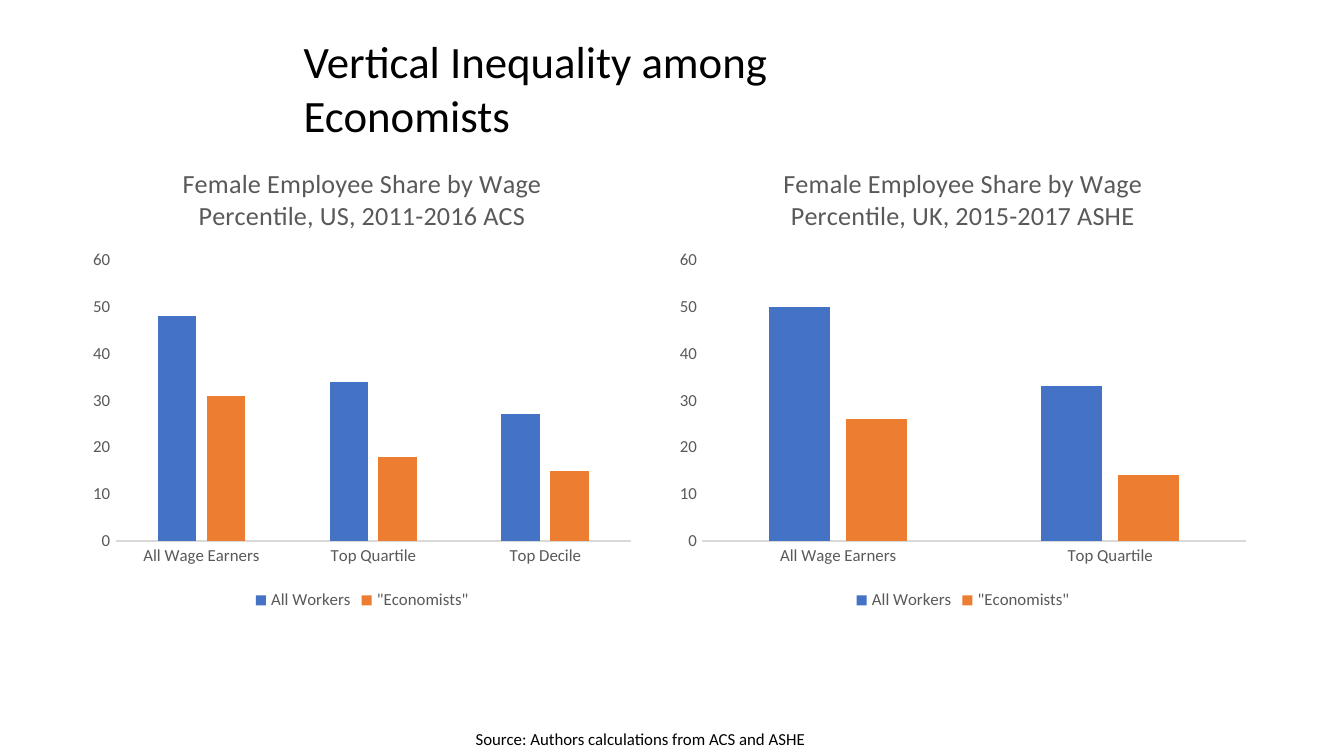
"""Build a slide comparing female employee shares by wage percentile in the US and UK."""
from pptx import Presentation
from pptx.chart.data import CategoryChartData
from pptx.dml.color import RGBColor
from pptx.enum.chart import XL_CHART_TYPE, XL_LEGEND_POSITION, XL_TICK_MARK
from pptx.enum.text import MSO_ANCHOR, MSO_AUTO_SIZE, PP_ALIGN
from pptx.util import Inches, Pt

COLUMNS = XL_CHART_TYPE.COLUMN_CLUSTERED
BOTTOM = XL_LEGEND_POSITION.BOTTOM
NO_TICK = XL_TICK_MARK.NONE
TOP = MSO_ANCHOR.TOP
NO_AUTOFIT = MSO_AUTO_SIZE.NONE
LEFT = PP_ALIGN.LEFT

BLACK = RGBColor(0x00, 0x00, 0x00)
GRAY = RGBColor(0x59, 0x59, 0x59)
AXIS_GRAY = RGBColor(0xD9, 0xD9, 0xD9)
BLUE = RGBColor(0x44, 0x72, 0xC4)
ORANGE = RGBColor(0xED, 0x7D, 0x31)

GROUPS = (("All Workers", BLUE), ('"Economists"', ORANGE))
PERCENTILES = ("All Wage Earners", "Top Quartile", "Top Decile")
COUNTRIES = (
    (0.61, 4.17, "US, 2011-2016 ACS", ((48, 34, 27), (31, 18, 15))),
    (4.97, 4.39, "UK, 2015-2017 ASHE", ((50, 33), (26, 14))),
)


def style_font(font, size, color):
    font.name = "Calibri"
    font.size = Pt(size)
    font.bold = False
    font.color.rgb = color


def place(box, left, top, width, height):
    box.left, box.top = Inches(left), Inches(top)
    box.width, box.height = Inches(width), Inches(height)


def write_text(box, text, size, wrap):
    frame = box.text_frame
    frame.text = text
    frame.word_wrap = wrap
    frame.auto_size = NO_AUTOFIT
    frame.vertical_anchor = TOP
    paragraph = frame.paragraphs[0]
    paragraph.alignment = LEFT
    paragraph.line_spacing = 1.0
    paragraph.space_before = Pt(0)
    style_font(paragraph.font, size, BLACK)


def style_axes(chart):
    for axis in (chart.category_axis, chart.value_axis):
        axis.major_tick_mark = axis.minor_tick_mark = NO_TICK
        style_font(axis.tick_labels.font, 9, GRAY)
    baseline = chart.category_axis.format.line
    baseline.color.rgb = AXIS_GRAY
    baseline.width = Pt(0.75)
    scale = chart.value_axis
    scale.has_major_gridlines = False
    scale.minimum_scale, scale.maximum_scale, scale.major_unit = 0, 60, 10
    scale.format.line.fill.background()


def add_share_chart(slide, left, width, survey, shares):
    data = CategoryChartData()
    data.categories = PERCENTILES[:len(shares[0])]
    for (group, _), values in zip(GROUPS, shares):
        data.add_series(group, values)
    chart = slide.shapes.add_chart(
        COLUMNS, Inches(left), Inches(1.07), Inches(width), Inches(3.51), data
    ).chart
    style_font(chart.font, 10, BLACK)

    heading = chart.chart_title.text_frame
    heading.text = f"Female Employee Share by Wage Percentile, {survey}"
    style_font(heading.paragraphs[0].font, 14, GRAY)
    chart.chart_title.include_in_layout = False

    chart.has_legend = True
    chart.legend.position = BOTTOM
    chart.legend.include_in_layout = False
    style_font(chart.legend.font, 9, GRAY)

    style_axes(chart)
    columns = chart.plots[0]
    columns.gap_width, columns.overlap = 219, -27
    columns.vary_by_categories = False
    for series, (_, color) in zip(columns.series, GROUPS):
        series.format.fill.solid()
        series.format.fill.fore_color.rgb = color


def main():
    deck = Presentation()
    deck.slide_width = Inches(10)
    deck.slide_height = deck.slide_width * 9 // 16
    slide = deck.slides.add_slide(deck.slide_layouts.get_by_name("Title Only"))

    for country in COUNTRIES:
        add_share_chart(slide, *country)

    title = slide.shapes.title
    place(title, 2.16, 0.2, 5.24, 0.5)
    write_text(title, "Vertical Inequality among Economists", 24, True)

    source = slide.shapes.add_textbox(
        Inches(3.44), Inches(5.37), Inches(2.68), Inches(0.25)
    )
    write_text(source, "Source: Authors calculations from ACS and ASHE", 9, False)

    deck.save("out.pptx")


if __name__ == "__main__":
    main()
